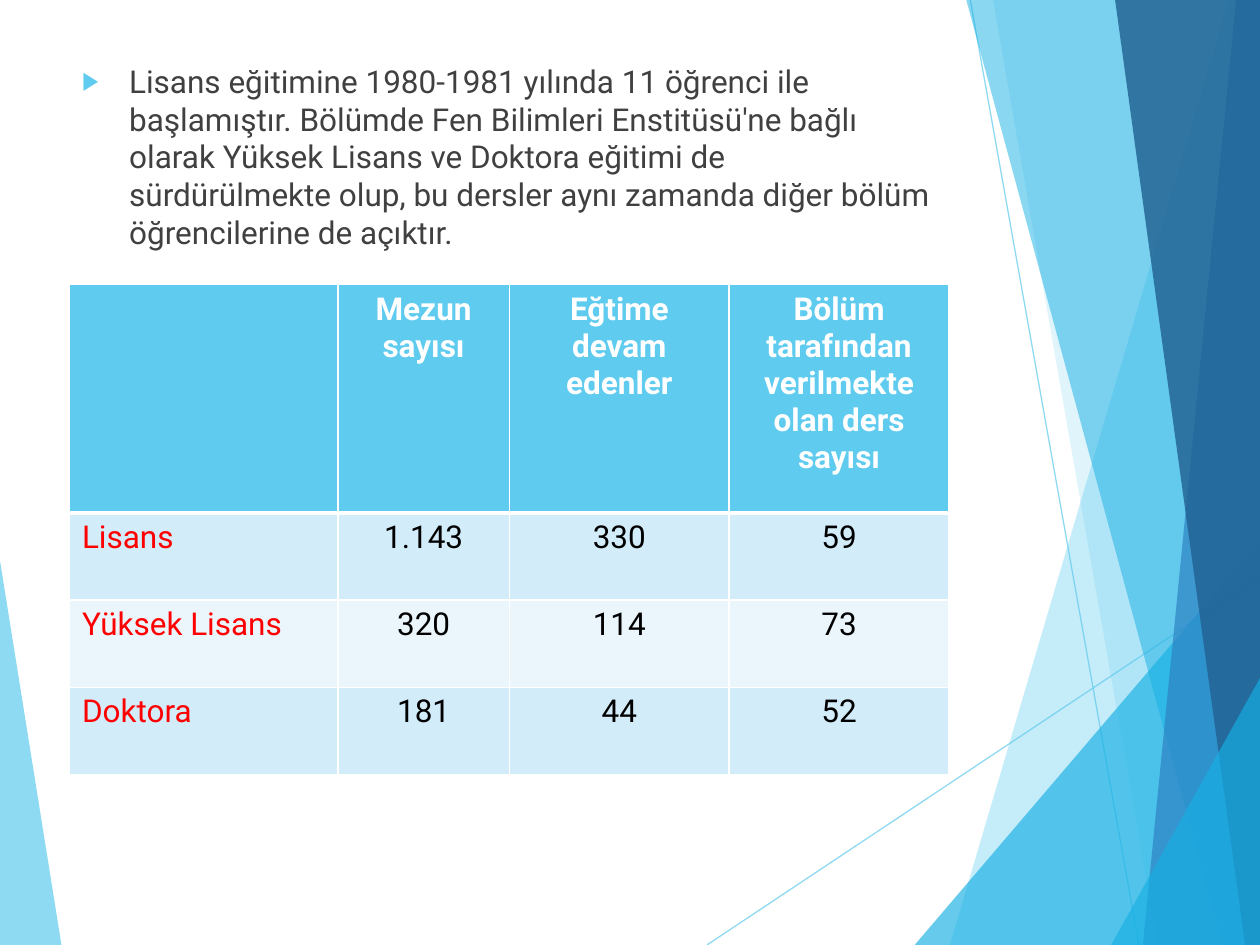
import pptx
import pptx.dml.color
import pptx.enum.shapes
import pptx.enum.text
import pptx.oxml
import pptx.oxml.ns
import pptx.util
from pptx.util import Cm

RGBColor = pptx.dml.color.RGBColor
ALIGN = pptx.enum.text.PP_ALIGN
SKY = RGBColor(0x5F, 0xCB, 0xEF)
CYAN = RGBColor(0x17, 0xB0, 0xE4)
BLUE = RGBColor(0x2E, 0x83, 0xC3)
NAVY = RGBColor(0x22, 0x62, 0x92)
PALE = RGBColor(0xD2, 0xEC, 0xF9)
PALER = RGBColor(0xEA, 0xF6, 0xFC)
WHITE = RGBColor(0xFF, 0xFF, 0xFF)
BLACK = RGBColor(0, 0, 0)
RED = RGBColor(0xFF, 0, 0)
GREY = RGBColor(0x40, 0x40, 0x40)

WIDTH, HEIGHT = 25.4, 19.05
BASE_FONT = {"name": "Roboto", "size": pptx.util.Pt(18), "bold": False}
INTRO = (
    "Lisans eğitimine 1980-1981 yılında 11 öğrenci ile başlamıştır. "
    "Bölümde Fen Bilimleri Enstitüsü'ne bağlı olarak Yüksek Lisans ve Doktora "
    "eğitimi de sürdürülmekte olup, bu dersler aynı zamanda diğer bölüm "
    "öğrencilerine de açıktır."
)
STUDENT_ROWS = [
    ["", "Mezun sayısı", "Eğtime devam edenler",
     "Bölüm tarafından verilmekte olan ders sayısı"],
    ["Lisans", "1.143", "330", "59"],
    ["Yüksek Lisans", "320", "114", "73"],
    ["Doktora", "181", "44", "52"],
]
COLUMN_WIDTHS = [5.41, 3.46, 4.43, 4.43]
ROW_HEIGHTS = [4.6, 1.76, 1.76, 1.76]


def append_xml(parent, markup, position=None):
    """Add a DrawingML element to a parent, at the end or at a position."""
    opening, rest = markup.split(" ", 1)
    element = pptx.oxml.parse_xml(f"{opening} {pptx.oxml.ns.nsdecls('a')} {rest}")
    parent.insert(len(parent) if position is None else position, element)


def set_opacity(shape, percent):
    """Make every plain colour of a shape partly transparent."""
    for colour in list(shape._element.iter(pptx.oxml.ns.qn("a:srgbClr"))):
        append_xml(colour, f'<a:alpha val="{percent * 1000}"/>')


def format_text(paragraph, alignment, colour, **changes):
    """Align a paragraph and apply font values to its runs."""
    paragraph.alignment = alignment
    for run in paragraph.runs:
        for attribute, value in {**BASE_FONT, **changes}.items():
            setattr(run.font, attribute, value)
        run.font.color.rgb = colour


def add_facet(slide, points, colour, opacity):
    """Draw one translucent polygon of the backdrop."""
    start, *others = [(Cm(x), Cm(y)) for x, y in points]
    builder = slide.shapes.build_freeform(*start)
    builder.add_line_segments(others, close=True)
    facet = builder.convert_to_shape()
    facet.shadow.inherit = False
    facet.fill.solid()
    facet.fill.fore_color.rgb = colour
    facet.line.fill.background()
    set_opacity(facet, opacity)


def add_band(slide, top_x, bottom_x, colour, opacity):
    """Fill the area from a slanted edge to the right side."""
    add_facet(slide, [(top_x, 0), (bottom_x, HEIGHT), (WIDTH, HEIGHT), (WIDTH, 0)],
              colour, opacity)


def add_corner(slide, side_x, side_y, bottom_x, colour, opacity):
    """Fill a triangle in a bottom corner."""
    add_facet(slide, [(side_x, side_y), (bottom_x, HEIGHT), (side_x, HEIGHT)],
              colour, opacity)


def add_ray(slide, start, end):
    """Draw one thin translucent line."""
    ray = slide.shapes.add_connector(
        pptx.enum.shapes.MSO_CONNECTOR.STRAIGHT, *map(Cm, start + end))
    ray.line.color.rgb = SKY
    ray.line.width = pptx.util.Pt(0.75)
    set_opacity(ray, 70)
    append_xml(ray._element.spPr, "<a:effectLst />")


def add_backdrop(slide):
    """Draw the facets and rays from back to front."""
    add_corner(slide, 0, 11.3, 1.24, SKY, 70)
    add_ray(slide, (14.25, HEIGHT), (WIDTH, 11.63))
    add_ray(slide, (19.56, 0), (22.96, HEIGHT))
    add_band(slide, 24.77, 19.15, SKY, 36)
    add_band(slide, 20.02, 23.34, SKY, 20)
    add_corner(slide, WIDTH, 10.9, 18.44, CYAN, 66)
    add_band(slide, 19.48, 24.64, CYAN, 50)
    add_band(slide, 24.92, 23.04, BLUE, 70)
    add_band(slide, 22.48, 25.1, NAVY, 82)
    add_corner(slide, WIDTH, 13.67, 22.4, CYAN, 66)


def fill_intro(body):
    """Place the body placeholder and write its bulleted paragraph."""
    box = {"left": Cm(1.4), "top": Cm(1.12), "width": Cm(17.63), "height": Cm(6.8)}
    for attribute, value in box.items():
        setattr(body, attribute, value)
    body.text_frame.text = INTRO
    body.text_frame.auto_size = pptx.enum.text.MSO_AUTO_SIZE.NONE
    paragraph = body.text_frame.paragraphs[0]
    format_text(paragraph, ALIGN.LEFT, GREY)
    paragraph.space_before = pptx.util.Pt(10)
    properties = paragraph._p.get_or_add_pPr()
    properties.set("marL", str(Cm(0.95)))
    properties.set("indent", str(-Cm(0.95)))
    append_xml(properties, f'<a:buClr ><a:srgbClr val="{SKY}"/></a:buClr>')
    append_xml(properties, '<a:buSzPct val="80000"/>')
    append_xml(properties, '<a:buChar char="▶"/>')


def set_borders(cell, top, bottom):
    """Give a cell white borders, with its top and bottom widths in points."""
    sides = {"lnL": 1, "lnR": 1, "lnT": top, "lnB": bottom}
    for position, (side, points) in enumerate(sides.items()):
        append_xml(
            cell._tc.get_or_add_tcPr(),
            f'<a:{side} w="{pptx.util.Pt(points)}"><a:solidFill>'
            f'<a:srgbClr val="{WHITE}"/></a:solidFill></a:{side}>',
            position)


def add_student_table(slide):
    """Add the table of graduates, students and courses."""
    table = slide.shapes.add_table(
        len(ROW_HEIGHTS), len(COLUMN_WIDTHS), Cm(1.4), Cm(5.74),
        Cm(sum(COLUMN_WIDTHS)), Cm(sum(ROW_HEIGHTS))).table
    for column, width in zip(table.columns, COLUMN_WIDTHS):
        column.width = Cm(width)
    for row, height in zip(table.rows, ROW_HEIGHTS):
        row.height = Cm(height)
    for r, texts in enumerate(STUDENT_ROWS):
        header = r == 0
        background = SKY if header else PALE if r % 2 else PALER
        for c, text in enumerate(texts):
            cell = table.cell(r, c)
            cell.text = text
            cell.fill.solid()
            cell.fill.fore_color.rgb = background
            set_borders(cell, 3 if r == 1 else 1, 3 if header else 1)
            colour = WHITE if header else BLACK if c else RED
            format_text(cell.text_frame.paragraphs[0],
                        ALIGN.CENTER if c else ALIGN.LEFT, colour, bold=header)


def main():
    """Build the slide and save it."""
    presentation = pptx.Presentation()
    presentation.slide_width = Cm(WIDTH)
    presentation.slide_height = Cm(HEIGHT)
    slide = presentation.slides.add_slide(presentation.slide_layouts[1])
    heading, body = slide.placeholders
    heading._element.getparent().remove(heading._element)
    add_backdrop(slide)
    slide.shapes._spTree.append(body._element)
    fill_intro(body)
    add_student_table(slide)
    presentation.save("out.pptx")


if __name__ == "__main__":
    main()
